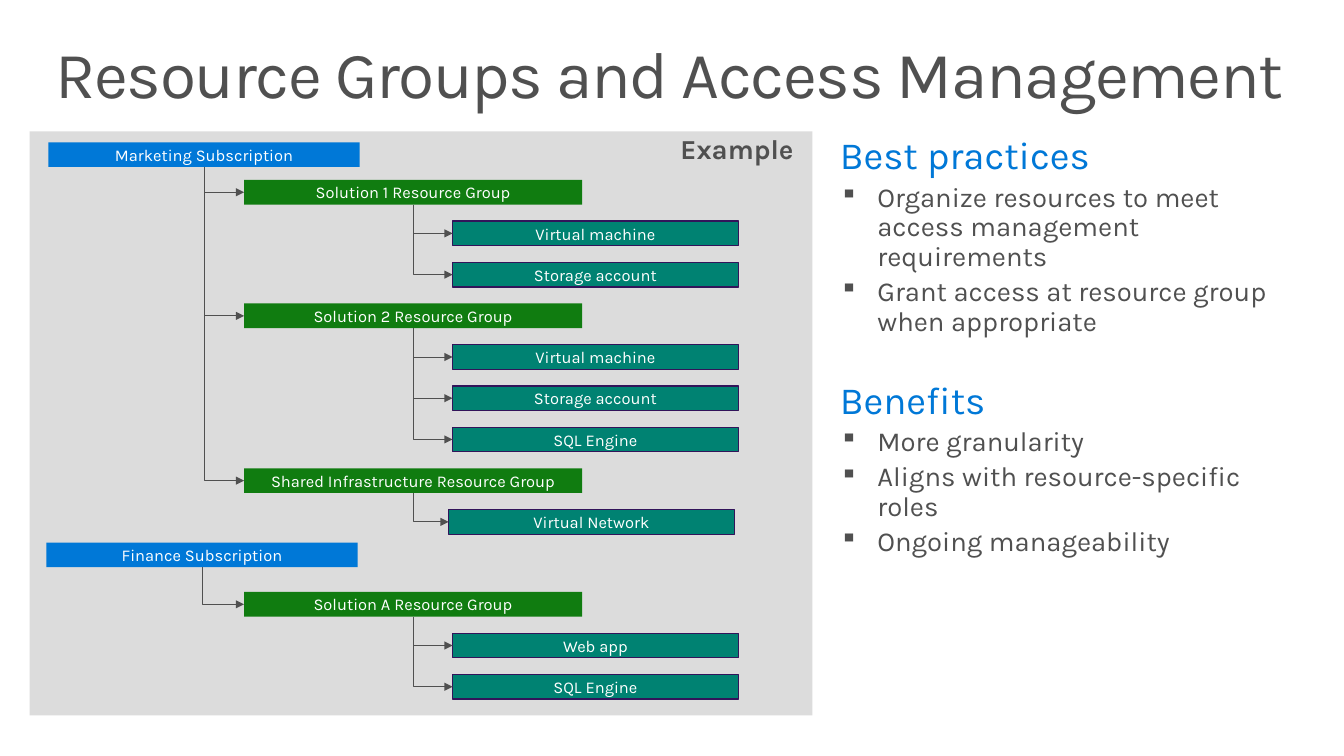
from lxml.etree import SubElement
from pptx import Presentation
from pptx.dml.color import RGBColor as RGB
from pptx.enum.shapes import MSO_CONNECTOR as LINK, MSO_SHAPE as SHAPE
from pptx.enum.text import MSO_ANCHOR as ANCHOR, PP_ALIGN as ALIGN
from pptx.oxml.ns import qn
from pptx.util import Inches as In, Pt

COLORS = {"ink": "505050", "panel": "DCDCDC", "blue": "0078D7", "green": "107C10",
          "teal": "008272", "edge": "32145A", "white": "FFFFFF"}
FONT = "Karla"
PITCH, BAR = 0.417, 0.25

TREE = [
    ("Marketing Subscription", 0.19, 0.11, [
        ("Solution 1 Resource Group", 0, 4.28, ["Virtual machine", "Storage account"]),
        ("Solution 2 Resource Group", 3, 4.28,
         ["Virtual machine", "Storage account", "SQL Engine"]),
        ("Shared Infrastructure Resource Group", 7, 4.24, ["Virtual Network"]),
    ]),
    ("Finance Subscription", 0.17, 4.16, [
        ("Solution A Resource Group", 10, 4.28, ["Web app", "SQL Engine"]),
    ]),
]
NOTES = [
    ("Best practices", ["Organize resources to meet access management requirements",
                        "Grant access at resource group when appropriate"]),
    ("Benefits", ["More granularity", "Aligns with resource-specific roles",
                  "Ongoing manageability"]),
]


def rgb(name):
    """Return a palette colour."""
    return RGB.from_string(COLORS[name])


def style(para, size, color, bold=False):
    """Format the runs of a paragraph."""
    for run in para.runs:
        font = run.font
        font.name, font.size, font.bold = FONT, Pt(size), bold
        font.color.rgb = rgb(color)


def text_box(slide, box):
    """Add a wrapping text box and return its frame."""
    frame = slide.shapes.add_textbox(*map(In, box)).text_frame
    frame.word_wrap = True
    return frame


def rect(slide, box, fill, edge=None):
    """Add a flat rectangle."""
    shape = slide.shapes.add_shape(SHAPE.RECTANGLE, *map(In, box))
    shape.shadow.inherit = False
    shape.fill.solid()
    shape.fill.fore_color.rgb = rgb(fill)
    if edge:
        shape.line.color.rgb = rgb(edge)
        shape.line.width = Pt(0.85)
    else:
        shape.line.fill.background()
    return shape


def bar(slide, x, y, width, text, fill, edge=None):
    """Add a labelled bar of the tree."""
    shape = rect(slide, (x, y, width, BAR), fill, edge)
    frame = shape.text_frame
    frame.margin_left = frame.margin_right = 0
    frame.margin_top = frame.margin_bottom = In(0.05)
    frame.vertical_anchor = ANCHOR.MIDDLE
    frame.text = text
    frame.paragraphs[0].alignment = ALIGN.CENTER
    style(frame.paragraphs[0], 12, "white")
    return shape


def link(slide, parent, child):
    """Run an elbow arrow from the parent's bottom to the child's left side."""
    x, y = parent.left + parent.width // 2, parent.top + parent.height
    wide, high = child.left - x, child.top + child.height // 2 - y
    line = slide.shapes.add_connector(LINK.ELBOW, x, y, x + wide, y + high)
    line.begin_connect(parent, 0 + 2)
    line.end_connect(child, 1)
    line.left, line.top = x + (wide - high) // 2, y + (high - wide) // 2
    line.width, line.height = high, wide
    props = line._element.spPr
    frame = props.find(qn("a:xfrm"))
    for key, value in (("rot", "16200000"), ("flipH", "1"), ("flipV", "0")):
        frame.set(key, value)
    props.find(qn("a:prstGeom")).set("prst", "bentConnector2")
    line.line.color.rgb = rgb("ink")
    line.line.width = Pt(0.75)
    SubElement(props.find(qn("a:ln")), qn("a:tailEnd"), type="triangle")
    SubElement(props, qn("a:effectLst"))


def title(slide, box, text):
    """Add the slide title."""
    frame = text_box(slide, box)
    frame.margin_left = frame.margin_right = In(0.16)
    frame.margin_top = frame.margin_bottom = In(0.1)
    frame.text = text
    para = frame.paragraphs[0]
    para.line_spacing = 0.9
    style(para, 48, "ink")
    para.runs[0].font._element.set("spc", "-100")


def tree(slide, box):
    """Draw the example panel with its subscriptions, groups and resources."""
    left, top, width, _ = box
    rect(slide, box, "panel")
    for name, dx, dy, groups in TREE:
        root = bar(slide, left + dx, top + dy, 3.15, name, "blue")
        for group, row, inset, items in groups:
            y = top + 0.49 + row * PITCH
            node = bar(slide, left + 2.17, y, 3.42, group, "green")
            link(slide, root, node)
            for step, item in enumerate(items, 1):
                leaf = bar(slide, left + inset, y + step * PITCH, 2.89, item,
                           "teal", "edge")
                link(slide, node, leaf)
    frame = text_box(slide, (left + width - 2.76, top, 2.67, 0.5))
    frame.text = "Example"
    para = frame.paragraphs[0]
    para.alignment, para.line_spacing = ALIGN.RIGHT, 0.9
    style(para, 20, "ink", True)


def bullet(para):
    """Give a paragraph a square bullet and a hanging indent."""
    props = para._p.get_or_add_pPr()
    props.set("marL", str(In(0.38)))
    props.set("indent", str(-In(0.38)))
    SubElement(SubElement(props, qn("a:buClr")), qn("a:srgbClr"), val=COLORS["ink"])
    SubElement(props, qn("a:buSzPct"), val="90000")
    SubElement(props, qn("a:buChar"), char="▪")


def notes(slide, box):
    """Write the headed bullet lists."""
    frame = text_box(slide, box)
    for part, (head, items) in enumerate(NOTES):
        para = frame.add_paragraph() if part else frame.paragraphs[0]
        para.text = head
        para.line_spacing = 0.9
        para.space_before = Pt(32 if part else 0)
        style(para, 28, "blue")
        for item in items:
            para = frame.add_paragraph()
            para.text = item
            bullet(para)
            para.line_spacing, para.space_before = 0.9, Pt(4)
            style(para, 20, "ink")


def main():
    """Build and save the slide."""
    deck = Presentation()
    deck.slide_width, deck.slide_height = In(13.6), In(7.65)
    slide = deck.slides.add_slide(deck.slide_layouts[6])
    title(slide, (0.4, 0.32, 12.8, 1), "Resource Groups and Access Management")
    tree(slide, (0.3, 1.33, 7.92, 5.91))
    notes(slide, (8.4, 1.33, 4.9, 5.75))
    deck.save("out.pptx")


if __name__ == "__main__":
    main()
